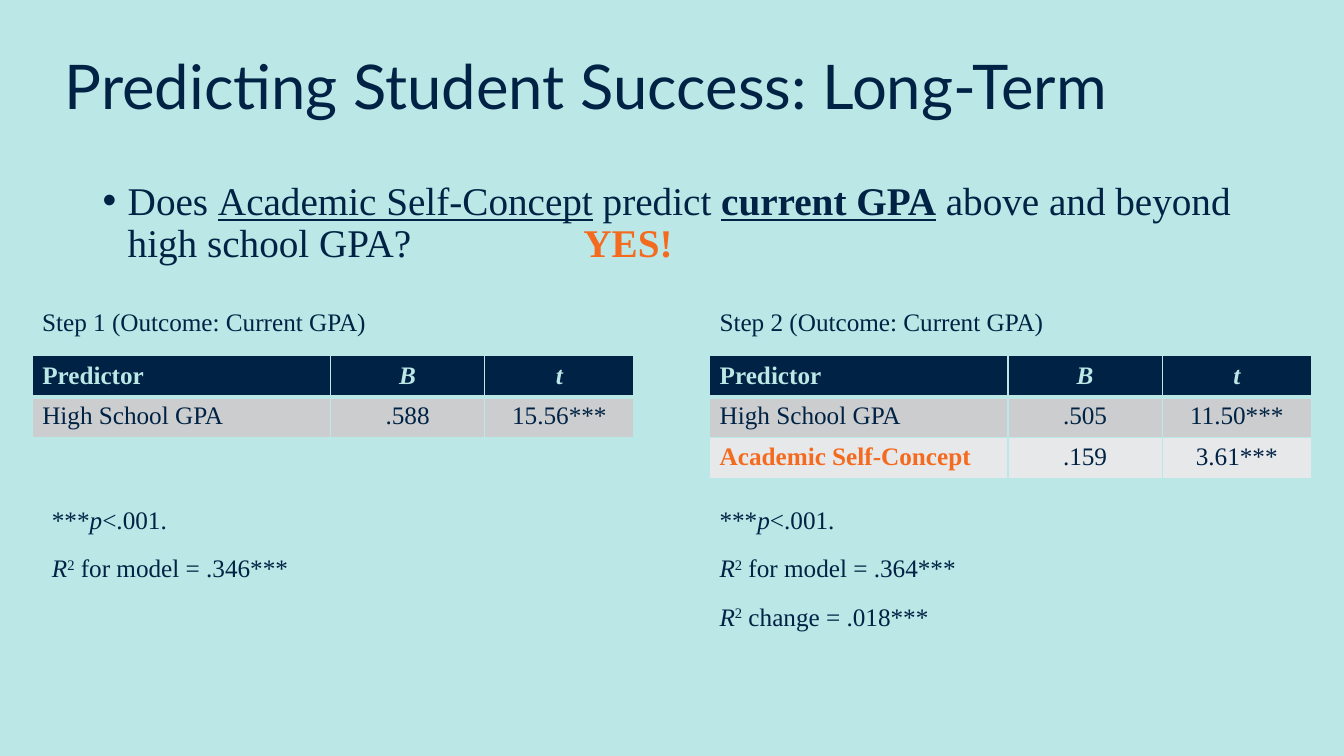
from lxml import etree
from pptx import Presentation
from pptx.dml.color import RGBColor
from pptx.enum.text import MSO_ANCHOR, PP_ALIGN
from pptx.oxml.ns import qn
from pptx.util import Pt

LEFT, CENTER = PP_ALIGN.LEFT, PP_ALIGN.CENTER
MIDDLE, TOP = MSO_ANCHOR.MIDDLE, MSO_ANCHOR.TOP
NAVY, AQUA, ORANGE = "002244", "BBE7E6", "F46A1F"
BAND_FILLS = ["E7E8E9", "CCCDCF"]
SERIF = "Times New Roman"


def color(hex_value):
    return RGBColor.from_string(hex_value)


def write(para, spans, size=18, hex_value=NAVY, name=SERIF):
    """Fill a paragraph with (text, marks); marks are b, i, u and ^ for superscript."""
    para.font.size, para.font.name = Pt(size), name
    para.font.color.rgb = color(hex_value)
    for text, marks in spans:
        span = para.add_run()
        span.text = text
        if "b" in marks:
            span.font.bold = True
        if "i" in marks:
            span.font.italic = True
        if "u" in marks:
            span.font.underline = True
        if "^" in marks:
            span.font._element.set("baseline", "30000")


deck = Presentation()
deck.slide_width, deck.slide_height = Pt(960), Pt(540)
page = deck.slides.add_slide(deck.slide_layouts[5])
page.background.fill.solid()
page.background.fill.fore_color.rgb = color(AQUA)

# Title
title = page.shapes.title
title.left, title.top, title.width, title.height = Pt(39), Pt(12), Pt(828), Pt(104.4)
title.text_frame.vertical_anchor = MIDDLE
para = title.text_frame.paragraphs[0]
para.alignment, para.line_spacing = LEFT, 0.9
write(para, [("Predicting Student Success: Long-Term", "")], 44, NAVY, "Lato")

# Text boxes: left, top, width, height, size, colour, paragraphs
question = [("Does ", ""), ("Academic Self-Concept", "u"), (" predict ", ""),
            ("current GPA", "bu"), (" above and beyond high school GPA?", "")]
significance = [("***", ""), ("p", "i"), ("<.001.", "")]
r_squared = [("R", "i"), ("2", "^")]
text_boxes = [
    (66.2, 126, 828, 361, 28, NAVY, [question]),
    (23, 215.3, 430, 29.2, 18, NAVY, [[("Step 1 (Outcome: Current GPA)", "")]]),
    (506.9, 215.3, 430, 29.2, 18, NAVY, [[("Step 2 (Outcome: Current GPA)", "")]]),
    (30, 356.4, 396, 63.4, 18, NAVY,
     [significance, r_squared + [(" for model = .346***", "")]]),
    (506.9, 356.4, 396, 97.2, 18, NAVY,
     [significance, r_squared + [(" for model = .364***", "")],
      r_squared + [(" change = .018***", "")]]),
    (409.7, 152.6, 86.4, 41, 28, ORANGE, [[("YES!", "b")]]),
]
for left, top, width, height, size, hex_value, paragraphs in text_boxes:
    box = page.shapes.add_textbox(Pt(left), Pt(top), Pt(width), Pt(height))
    frame = box.text_frame
    frame.word_wrap = True
    for index, spans in enumerate(paragraphs):
        para = frame.add_paragraph() if index else frame.paragraphs[0]
        if index:
            para.space_before = Pt(13)
        if spans is question:
            para.line_spacing = 0.9
            properties = para._p.get_or_add_pPr()
            properties.set("marL", str(Pt(18)))
            properties.set("indent", str(Pt(-18)))
            etree.SubElement(properties, qn("a:buFont"), typeface="Arial")
            etree.SubElement(properties, qn("a:buChar"), char="•")
        write(para, spans, size, hex_value)

# Regression tables
header = ["Predictor", "B", "t"]
column_widths = [213.1, 110.2, 106.6]
row_height = 29.2
tables = [
    (23, [header, ["High School GPA", ".588", "15.56***"]]),
    (506.9, [header, ["High School GPA", ".505", "11.50***"],
             ["Academic Self-Concept", ".159", "3.61***"]]),
]
for left, rows in tables:
    table = page.shapes.add_table(len(rows), len(header), Pt(left), Pt(254.2),
                                  Pt(sum(column_widths)), Pt(row_height * len(rows))).table
    table.horz_banding = False
    for column, width in zip(table.columns, column_widths):
        column.width = Pt(width)
    for r, row in enumerate(rows):
        table.rows[r].height = Pt(row_height)
        for c, text in enumerate(row):
            cell = table.cell(r, c)
            cell.vertical_anchor = TOP if r else MIDDLE
            cell.fill.solid()
            cell.fill.fore_color.rgb = color(BAND_FILLS[r % 2] if r else NAVY)
            para = cell.text_frame.paragraphs[0]
            para.alignment = CENTER if c else LEFT
            highlighted = text == "Academic Self-Concept"
            para.font.bold = r == 0 or highlighted
            para.font.italic = r == 0 and c > 0
            text_color = AQUA if r == 0 else ORANGE if highlighted else NAVY
            write(para, [(text, "")], 18, text_color)

            # Cell borders, heavier around the foot of the header row
            borders = {"L": 1, "R": 1, "T": 3 if r == 1 else 1, "B": 1 if r else 3}
            cell_properties = cell._tc.get_or_add_tcPr()
            for position, (side, weight) in enumerate(borders.items()):
                line = etree.Element(qn("a:ln" + side), w=str(Pt(weight)))
                fill = etree.SubElement(line, qn("a:solidFill"))
                etree.SubElement(fill, qn("a:srgbClr"), val=AQUA)
                cell_properties.insert(position, line)

deck.save("out.pptx")
